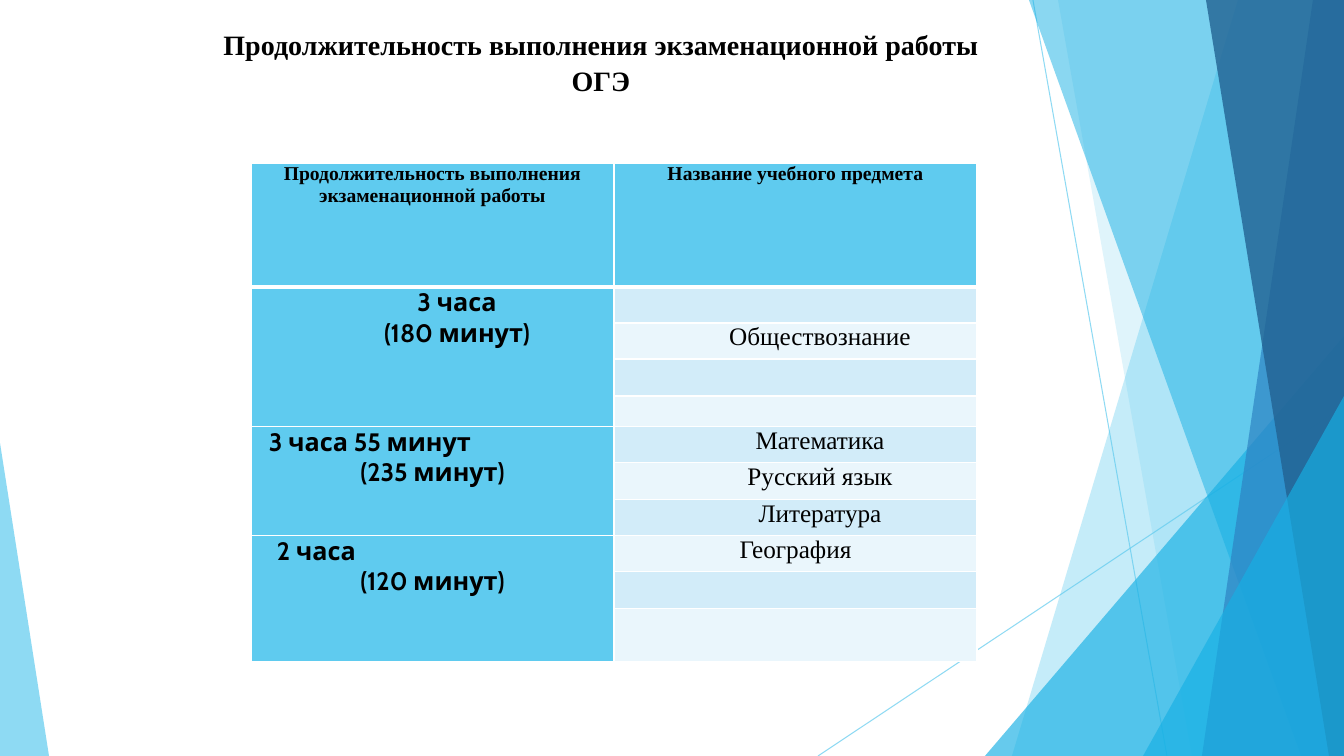
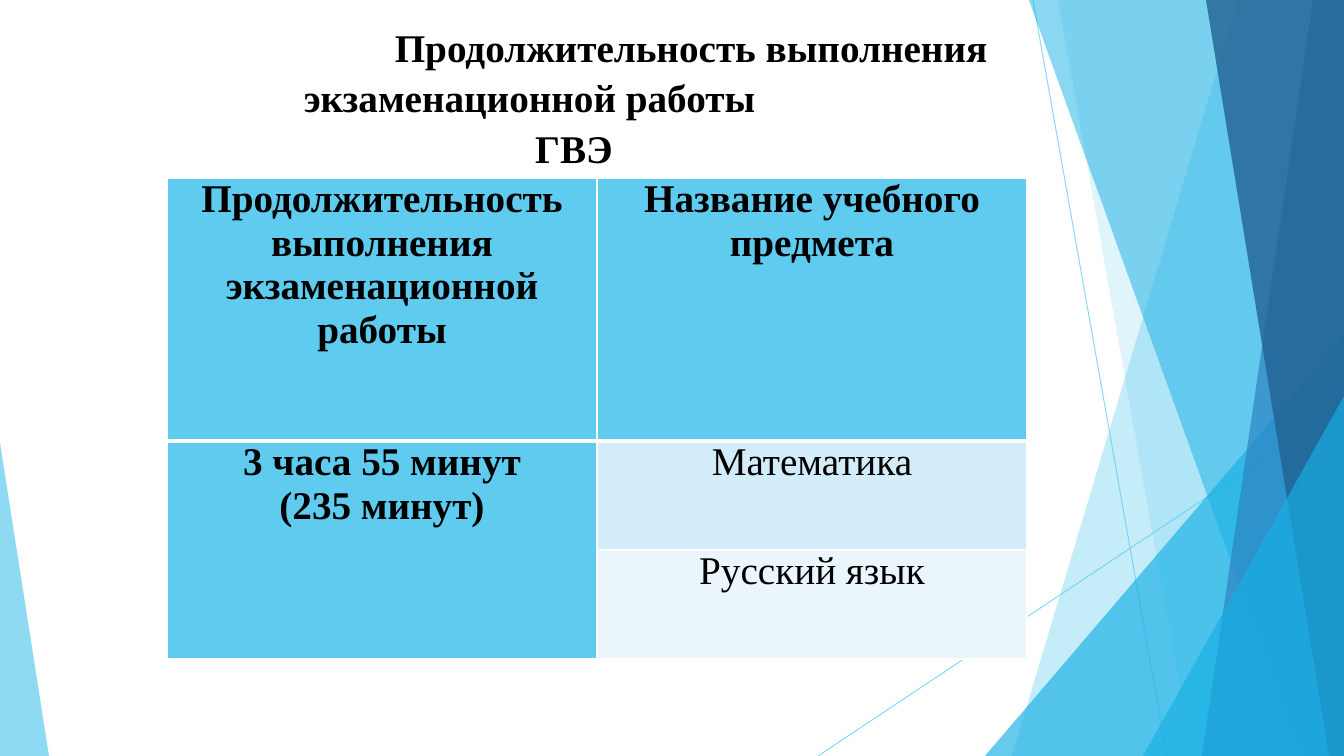
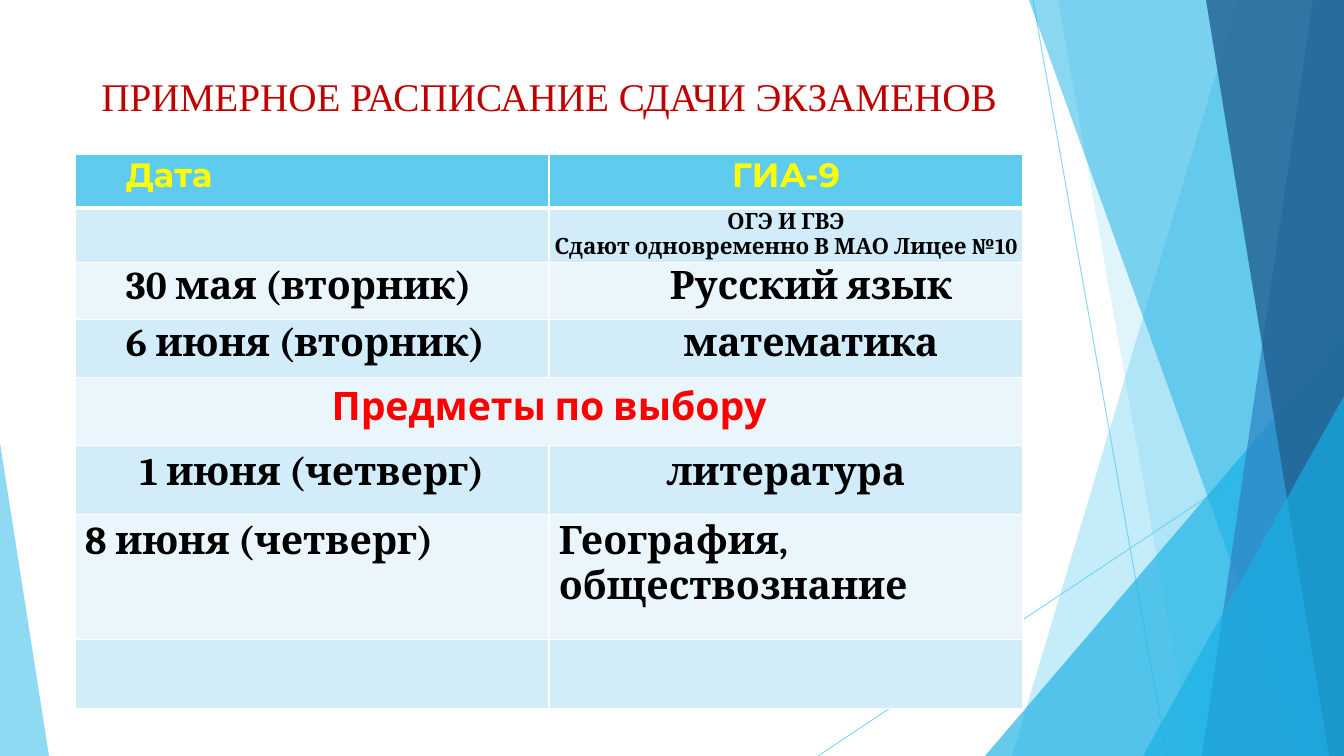
from lxml.etree import SubElement
from pptx import Presentation
from pptx.dml.color import RGBColor
from pptx.enum.shapes import MSO_CONNECTOR, MSO_SHAPE
from pptx.enum.text import MSO_ANCHOR, PP_ALIGN
from pptx.oxml.ns import qn
from pptx.util import Emu, Pt

WIDTH, HEIGHT = 1344, 756
EMU_PER_PX = 12192000 / WIDTH

SKY, AZURE, BLUE, NAVY = "5FCBEF", "17B0E4", "2E83C3", "226292"
BANDS = ["EAF6FC", "D2ECF9"]
BLACK, WHITE, YELLOW, RED, DARK_RED = "000000", "FFFFFF", "FFFF00", "FF0000", "C00000"
SERIF, SANS, BOOK, HEADING = "Times New Roman", "Cabin", "Cambria", "Montserrat"
LEFT, CENTER = PP_ALIGN.LEFT, PP_ALIGN.CENTER


def px(length):
    return Emu(round(length * EMU_PER_PX))


def rgb(color):
    return RGBColor.from_string(color)


def set_opacity(shape, percent):
    for color in shape.element.iter(qn("a:srgbClr")):
        SubElement(color, qn("a:alpha"), val=str(percent * 1000))


def set_borders(cell, bottom):
    """Draw white cell borders; bottom is the lower one's width in points."""
    properties = cell._tc.get_or_add_tcPr()
    for side, width in (("L", 1), ("R", 1), ("T", 1), ("B", bottom)):
        line = SubElement(properties, qn(f"a:ln{side}"), w=str(Pt(width)))
        fill = SubElement(line, qn("a:solidFill"))
        SubElement(fill, qn("a:srgbClr"), val=WHITE)


def write(frame, text, size=18, font=SERIF, color=BLACK, bold=False,
          align=CENTER, indent=0, margin=0, spacing=1.0):
    """Add a paragraph, using the first one while it is still empty."""
    para = frame.paragraphs[-1]
    if para.runs:
        para = frame.add_paragraph()
    para.alignment = align
    para.line_spacing = spacing
    properties = para._p.get_or_add_pPr()
    properties.set("marL", str(px(margin)))
    properties.set("indent", str(px(indent)))
    span = para.add_run()
    span.text = text
    span.font.size = Pt(size)
    span.font.name = font
    span.font.bold = bold
    span.font.color.rgb = rgb(color)


class Deck:
    def __init__(self):
        self.deck = Presentation()
        self.deck.slide_width, self.deck.slide_height = px(WIDTH), px(HEIGHT)
        self.page = None

    def new_page(self):
        self.page = self.deck.slides.add_slide(self.deck.slide_layouts[6])
        self.ray(1033, 0, 1167, HEIGHT)
        self.ray(WIDTH, 406, 818, HEIGHT)
        self.wedge(1238, 1012, SKY, 36)
        self.wedge(1058, 1192, SKY, 20)
        self.triangle(985, 336, 359, 1, AZURE, 66)
        self.wedge(1029, 1301, AZURE, 50)
        self.wedge(1313, 1202, BLUE, 70)
        self.wedge(1206, 1329, NAVY, 80)
        self.triangle(1143, 396, 201, 1, AZURE, 66)
        self.triangle(0, 443, 49, 0, SKY, 70)

    def ray(self, x1, y1, x2, y2):
        line = self.page.shapes.add_connector(
            MSO_CONNECTOR.STRAIGHT, px(x1), px(y1), px(x2), px(y2))
        line.line.color.rgb = rgb(SKY)
        line.line.width = Pt(0.75)
        SubElement(line.element.spPr, qn("a:effectLst"))
        set_opacity(line, 70)

    def paint(self, shape, color, opacity):
        shape.shadow.inherit = False
        shape.fill.solid()
        shape.fill.fore_color.rgb = rgb(color)
        shape.line.fill.background()
        set_opacity(shape, opacity)

    def wedge(self, top_x, bottom_x, color, opacity):
        """Fill the page from a slanted edge to the right side."""
        builder = self.page.shapes.build_freeform(top_x, 0, scale=EMU_PER_PX)
        builder.add_line_segments(
            [(WIDTH, 0), (WIDTH, HEIGHT), (bottom_x, HEIGHT)], close=True)
        self.paint(builder.convert_to_shape(), color, opacity)

    def triangle(self, left, top, width, apex, color, opacity):
        """Stand a triangle on the lower page edge; apex is 0 left to 1 right."""
        shape = self.page.shapes.add_shape(
            MSO_SHAPE.ISOSCELES_TRIANGLE, px(left), px(top), px(width), px(HEIGHT - top))
        shape.adjustments[0] = apex
        self.paint(shape, color, opacity)

    def title(self, left, top, width, height):
        box = self.page.shapes.add_textbox(px(left), px(top), px(width), px(height))
        frame = box.text_frame
        frame.word_wrap = True
        frame.margin_left = frame.margin_right = px(10)
        frame.margin_top = frame.margin_bottom = px(5)
        return frame

    def table(self, left, top, column, heights, insets, accent_column=True):
        """Add a banded two-column table; insets holds (side, top) per row."""
        grid = self.page.shapes.add_table(
            len(heights), 2, px(left), px(top), px(2 * column), px(sum(heights))).table
        grid.first_row = grid.horz_banding = False
        for grid_column in grid.columns:
            grid_column.width = px(column)
        for row, (height, (side, upper)) in enumerate(zip(heights, insets)):
            grid.rows[row].height = px(height)
            for col in range(2):
                cell = grid.cell(row, col)
                set_borders(cell, bottom=1 if row else 3)
                accent = row == 0 or (accent_column and col == 0)
                cell.fill.solid()
                cell.fill.fore_color.rgb = rgb(SKY if accent else BANDS[row % 2])
                cell.margin_left = cell.margin_right = px(side)
                cell.margin_top, cell.margin_bottom = px(upper), px(0)
                cell.vertical_anchor = MSO_ANCHOR.TOP
                cell.text_frame.paragraphs[0].line_spacing = Pt(10)
        return grid


def add_oge_durations(deck):
    deck.new_page()
    heights = [124, 36, 36, 37, 28, 36, 37, 36, 36, 37, 53]
    grid = deck.table(251, 163, 363, heights, [(5, 0)] * len(heights))
    headings = ["Продолжительность выполнения экзаменационной работы",
                "Название учебного предмета"]
    for col, heading in enumerate(headings):
        write(grid.cell(0, col).text_frame, heading, size=14, bold=True)

    durations = [
        (1, 4, ("3 часа", CENTER, 49), ("(180 минут)", CENTER, 49)),
        (5, 7, ("3 часа 55 минут", LEFT, 13), ("(235 минут)", CENTER, 0)),
        (8, 10, ("2 часа", LEFT, 21), ("(120 минут)", CENTER, 0)),
    ]
    for first, last, *lines in durations:
        grid.cell(first, 0).merge(grid.cell(last, 0))
        for text, align, indent in lines:
            write(grid.cell(first, 0).text_frame, text, font=SANS, bold=True,
                  align=align, indent=indent)

    subjects = [(2, "Обществознание", 49), (5, "Математика", 49),
                (6, "Русский язык", 49), (7, "Литература", 49), (8, "География", 0)]
    for row, subject, indent in subjects:
        write(grid.cell(row, 1).text_frame, subject, indent=indent)

    frame = deck.title(105, 20, 943, 77)
    for text in ("Продолжительность выполнения экзаменационной работы", "ОГЭ"):
        write(frame, text, size=20, bold=True, indent=49, spacing=1.07)


def add_gve_durations(deck):
    deck.new_page()
    grid = deck.table(167, 178, 430, [263, 109, 109], [(7, 0)] * 3)
    grid.cell(1, 0).merge(grid.cell(2, 0))
    entries = [
        (0, 0, "Продолжительность выполнения экзаменационной работы", True),
        (0, 1, "Название учебного предмета", True),
        (1, 0, "3 часа 55 минут", True),
        (1, 0, "(235 минут)", True),
        (1, 1, "Математика", False),
        (2, 1, "Русский язык", False),
    ]
    for row, col, text, bold in entries:
        write(grid.cell(row, col).text_frame, text, size=28, bold=bold)

    frame = deck.title(58, 15, 943, 150)
    lines = [("Продолжительность выполнения экзаменационной работы", 323), ("ГВЭ", 89)]
    for text, indent in lines:
        write(frame, text, size=28, bold=True, indent=indent, spacing=1.07)


def add_schedule(deck):
    deck.new_page()
    write(deck.title(75, 67, 948, 60), "ПРИМЕРНОЕ РАСПИСАНИЕ СДАЧИ ЭКЗАМЕНОВ",
          size=28, color=DARK_RED)
    grid = deck.table(75, 154, 474, [54, 51, 57, 58, 68, 69, 125, 69],
                      [(1, 1)] * 4 + [(10, 5)] * 4, accent_column=False)
    heading = dict(size=24, font=HEADING, color=YELLOW, bold=True)
    write(grid.cell(0, 0).text_frame, "Дата", align=LEFT, margin=50, **heading)
    write(grid.cell(0, 1).text_frame, "ГИА-9", **heading)
    for text in ("ОГЭ И ГВЭ", "Сдают одновременно В МАО Лицее №10"):
        write(grid.cell(1, 1).text_frame, text, size=16, font=BOOK, bold=True)

    exams = [
        (2, "30 мая (вторник)", LEFT, "Русский язык", CENTER, 50),
        (3, "6 июня (вторник)", LEFT, "математика", CENTER, 50),
        (5, "1 июня (четверг)", CENTER, "литература", CENTER, 0),
        (6, "8 июня (четверг)", LEFT, "География, обществознание", LEFT, 0),
    ]
    for row, date, date_align, subject, subject_align, margin in exams:
        for col, text, align in ((0, date, date_align), (1, subject, subject_align)):
            write(grid.cell(row, col).text_frame, text, size=28, font=BOOK,
                  bold=True, align=align, margin=margin)

    grid.cell(4, 0).merge(grid.cell(4, 1))
    write(grid.cell(4, 0).text_frame, "Предметы по выбору", size=28, font=SANS,
          color=RED, bold=True)


def main():
    deck = Deck()
    add_oge_durations(deck)
    add_gve_durations(deck)
    add_schedule(deck)
    deck.deck.save("out.pptx")


if __name__ == "__main__":
    main()
